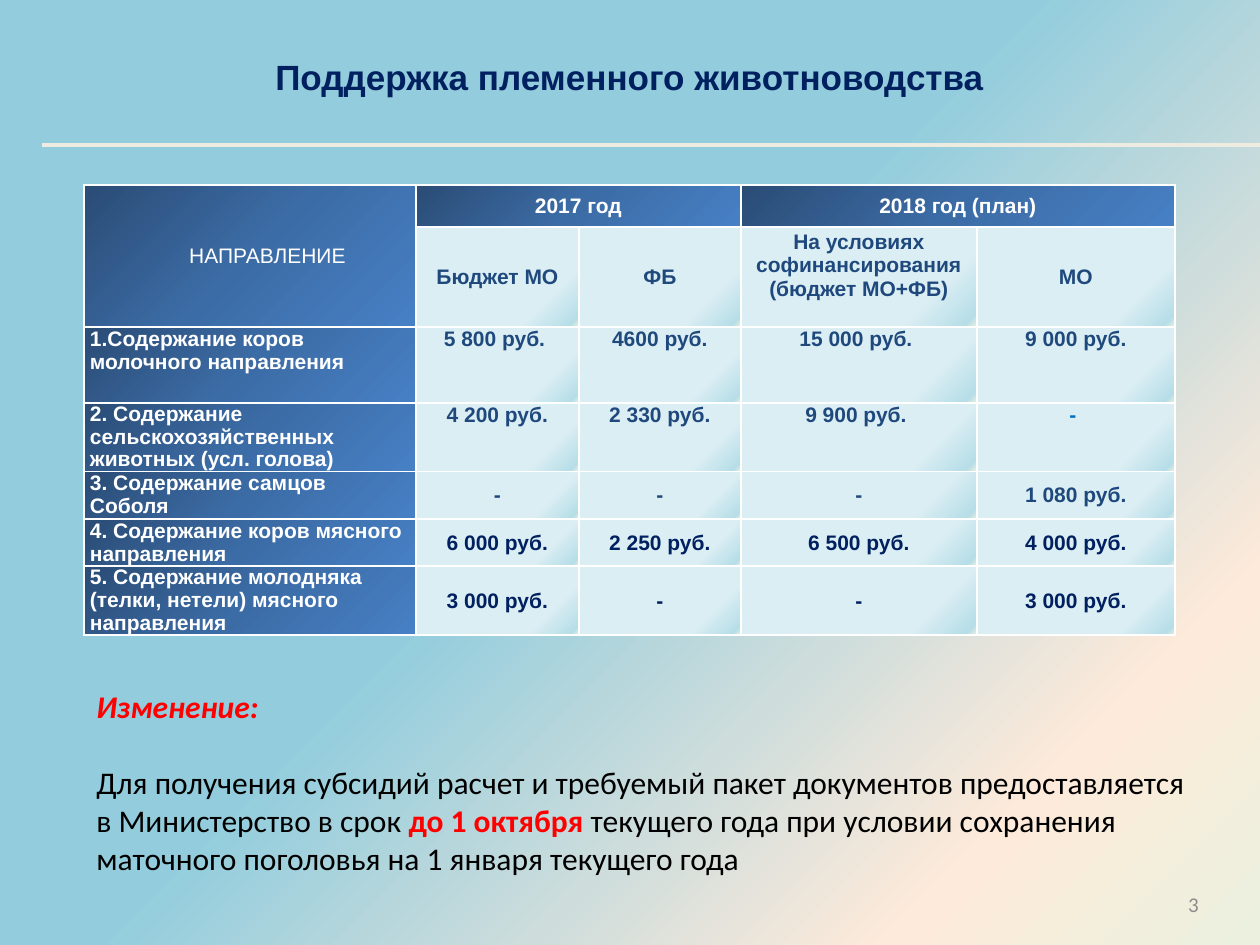
"""Build a slide on subsidies for pedigree livestock breeding."""
from lxml import etree
from pptx import Presentation
from pptx.dml.color import RGBColor
from pptx.enum.shapes import MSO_CONNECTOR
from pptx.enum.text import MSO_ANCHOR, PP_ALIGN
from pptx.oxml.ns import qn
from pptx.util import Emu, Pt

LEFT, CENTER, RIGHT = PP_ALIGN.LEFT, PP_ALIGN.CENTER, PP_ALIGN.RIGHT
TOP, MIDDLE = MSO_ANCHOR.TOP, MSO_ANCHOR.MIDDLE
STRAIGHT = MSO_CONNECTOR.STRAIGHT
EMU_PER_PX = 914400 / 126
COLORS = {
    "navy": "002060", "blue": "1F497D", "bright": "0070C0", "white": "FFFFFF",
    "rule": "EEECE1", "red": "FF0000", "black": "000000", "gray": "8C8C8C",
    "sky": "93CDDD", "peach": "FDEADA", "mint": "EBF1DE", "deep": "2A4C75",
    "mid": "3C6CA6", "light": "4780C5", "ice": "DBEEF4", "aqua": "B7DEE8",
}
BACKGROUND = [(11, "sky"), (47, "sky"), (83, "peach"), (100, "mint")]
HEADER_FILL = [(0, "deep"), (50, "mid"), (100, "light")]
VALUE_FILL = [(9, "ice"), (77, "ice"), (96, "aqua"), (100, "mint")]
COL_WIDTHS = [332, 163, 162, 236, 198]
ROW_HEIGHTS = [42, 100, 76, 68, 48, 47, 69]
ROWS = [
    ["НАПРАВЛЕНИЕ", "2017 год", "", "2018 год (план)", ""],
    ["", "Бюджет МО", "ФБ", "На условиях софинансирования (бюджет МО+ФБ)", "МО"],
    ["1.Содержание коров молочного направления",
     "5 800 руб. ", "4600 руб.", "15 000 руб. ", "9 000 руб."],
    ["2. Содержание сельскохозяйственных животных (усл. голова)",
     "4 200 руб.", "2 330 руб.", "9 900 руб. ", "- "],
    ["3. Содержание самцов Соболя", "-", "-", "-", "1 080 руб."],
    ["4. Содержание коров мясного направления",
     "6 000 руб.", "2 250 руб.", "6 500 руб.", "4 000 руб."],
    ["5. Содержание молодняка (телки, нетели) мясного направления",
     "3 000 руб.", "-", "-", "3 000 руб."],
]


def px(n):
    """Turn pixels into EMU."""
    return Emu(round(n * EMU_PER_PX))


def place(s, x, y, w, h):
    """Move and size a shape."""
    s.left, s.top, s.width, s.height = px(x), px(y), px(w), px(h)


def style_run(r, size, font, color, bold=False, italic=False):
    """Format one run."""
    r.font.size, r.font.name = Pt(size), font
    r.font.bold, r.font.italic = bold, italic
    r.font.color.rgb = RGBColor.from_string(COLORS[color])


def set_gradient(fill, owner, stops):
    """Give a fill a diagonal gradient with any number of stops."""
    fill.gradient()
    fill.gradient_angle = 315
    gs_list = next(owner.iter(qn("a:gsLst")))
    for gs in list(gs_list):
        gs_list.remove(gs)
    for pos, color in stops:
        gs = etree.SubElement(gs_list, qn("a:gs"), pos=str(pos * 1000))
        etree.SubElement(gs, qn("a:srgbClr"), val=COLORS[color])


def set_borders(cell, color, width):
    """Draw all four borders of a cell."""
    tc_pr = cell._tc.get_or_add_tcPr()
    for i, side in enumerate("LRTB"):
        ln = etree.Element(qn(f"a:ln{side}"), w=str(Pt(width)))
        solid = etree.SubElement(ln, qn("a:solidFill"))
        etree.SubElement(solid, qn("a:srgbClr"), val=COLORS[color])
        tc_pr.insert(i, ln)


def value_color(row, col):
    """Pick the text colour of a cell."""
    if row == 0 or col == 0:
        return "white"
    if (row, col) == (3, 4):
        return "bright"
    return "navy" if row > 4 else "blue"


def format_cell(cell, row, col, text):
    """Fill, border and write one table cell."""
    is_header = row == 0 or col == 0
    set_gradient(cell.fill, cell._tc, HEADER_FILL if is_header else VALUE_FILL)
    set_borders(cell, "white", 1)
    cell.margin_left = cell.margin_right = px(6)
    cell.margin_top = cell.margin_bottom = 0
    is_top = row == 2 or (row == 3 and col > 0)
    cell.vertical_anchor = TOP if is_top else MIDDLE
    if not text:
        return
    cell.text_frame.text = text
    p = cell.text_frame.paragraphs[0]
    p.alignment = LEFT if col == 0 and row > 0 else CENTER
    if col == 0 and row > 2:
        p.line_spacing = Pt(13)
    style_run(p.runs[0], 12, "Arial", value_color(row, col), bold=(row, col) != (0, 0))


def add_subsidy_table(slide):
    """Add the table of subsidy rates."""
    table = slide.shapes.add_table(
        len(ROWS), len(COL_WIDTHS), px(84), px(185),
        px(sum(COL_WIDTHS)), px(sum(ROW_HEIGHTS))).table
    table.first_row = table.horz_banding = False
    for col, w in zip(table.columns, COL_WIDTHS):
        col.width = px(w)
    for row, h in zip(table.rows, ROW_HEIGHTS):
        row.height = px(h)
    for i, texts in enumerate(ROWS):
        for j, text in enumerate(texts):
            format_cell(table.cell(i, j), i, j, text)
    for start, end in [((0, 0), (1, 0)), ((0, 1), (0, 2)), ((0, 3), (0, 4))]:
        table.cell(*start).merge(table.cell(*end))
    table.cell(0, 0).margin_left = px(41)
    table.cell(1, 3).margin_bottom = px(23)


def add_title(slide, text):
    """Write the title placeholder."""
    s = slide.shapes.title
    place(s, 24, 49, 1211, 55)
    tf = s.text_frame
    tf.text, tf.vertical_anchor = text, MIDDLE
    p = tf.paragraphs[0]
    p.alignment = CENTER
    style_run(p.runs[0], 20, "Arial", "navy", bold=True)


def add_rule(slide):
    """Draw the line below the title."""
    s = slide.shapes.add_connector(STRAIGHT, px(42), px(145), px(1260), px(145))
    s.line.color.rgb = RGBColor.from_string(COLORS["rule"])
    s.line.width = Pt(2.25)
    etree.SubElement(s.element.spPr, qn("a:effectLst"))


def add_text_box(slide, box, paragraphs, size, align=LEFT, anchor=TOP, gap=0):
    """Add a text box whose paragraphs are lists of styled runs."""
    tf = slide.shapes.add_textbox(*map(px, box)).text_frame
    tf.word_wrap, tf.vertical_anchor = True, anchor
    for i, runs in enumerate(paragraphs):
        p = tf.add_paragraph() if i else tf.paragraphs[0]
        p.alignment = align
        p.space_before = Pt(gap if i else 0)
        for text, *style in runs:
            for k, line in enumerate(text.split("\n")):
                if k:
                    p.add_line_break()
                r = p.add_run()
                r.text = line
                style_run(r, size, "Calibri", *style)


def main():
    """Build and save the slide."""
    prs = Presentation()
    prs.slide_width, prs.slide_height = px(1260), px(945)
    slide = prs.slides.add_slide(prs.slide_layouts[5])
    set_gradient(slide.background.fill, slide.element, BACKGROUND)
    add_title(slide, "Поддержка племенного животноводства")
    add_rule(slide)
    add_subsidy_table(slide)
    add_text_box(slide, (917, 879, 294, 50), [[("3", "gray")]], 12, RIGHT, MIDDLE)
    note = [
        [("Изменение:", "red", True, True)],
        [("Для получения субсидий расчет и требуемый пакет документов "
          "предоставляется\nв Министерство в срок ", "black"),
         ("до 1 октября ", "red", True),
         ("текущего года при условии сохранения маточного поголовья "
          "на 1 января текущего года", "black")],
    ]
    add_text_box(slide, (84, 681, 1150, 204), note, 18, gap=22)
    prs.save("out.pptx")


if __name__ == "__main__":
    main()
